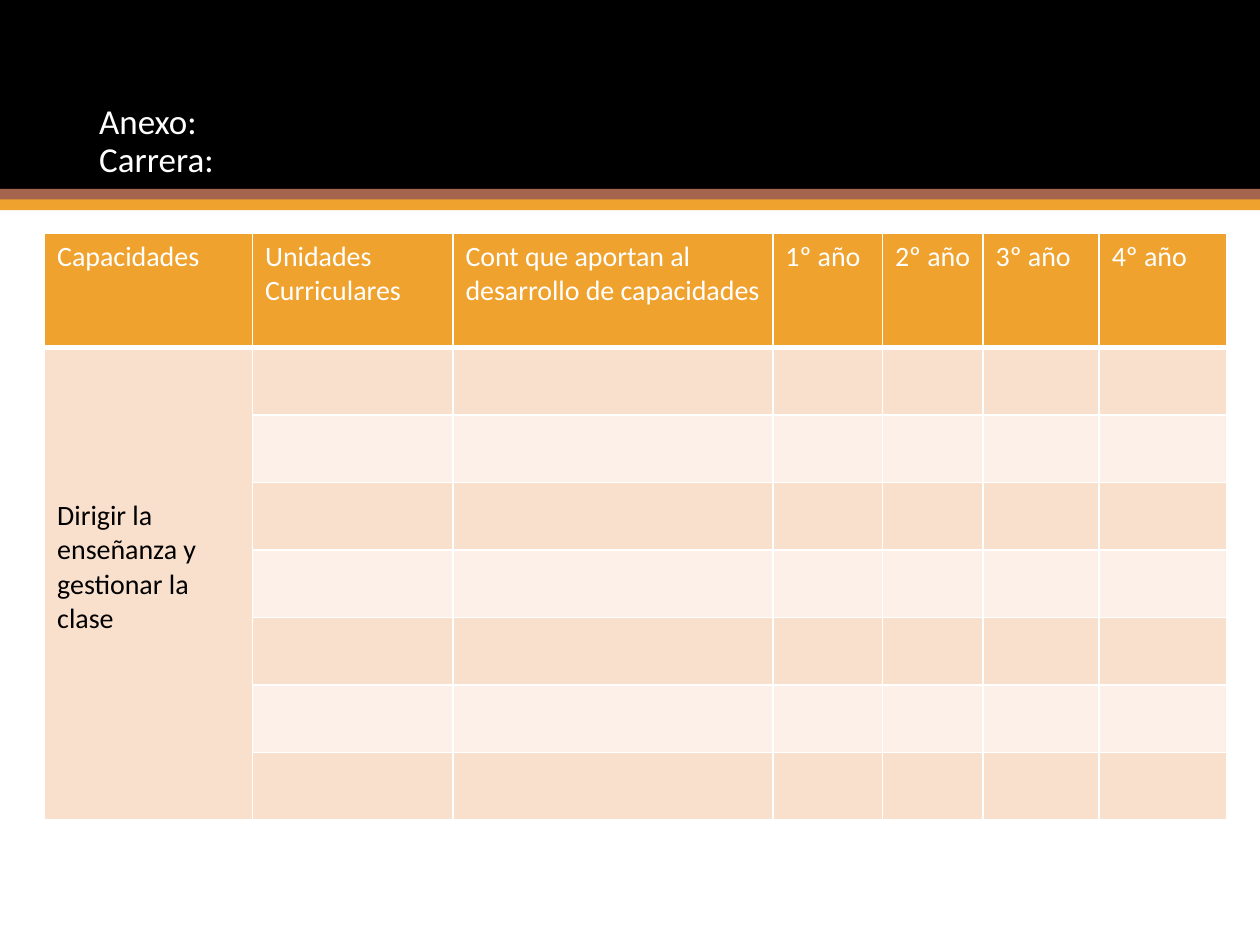
from lxml.etree import SubElement
from pptx import Presentation
from pptx.dml.color import RGBColor
from pptx.enum.shapes import MSO_SHAPE
from pptx.enum.text import MSO_ANCHOR
from pptx.oxml import parse_xml
from pptx.oxml.ns import nsdecls
from pptx.util import Cm, Pt

BLACK = RGBColor(0x00, 0x00, 0x00)
WHITE = RGBColor(0xFF, 0xFF, 0xFF)
BROWN = RGBColor(0xA5, 0x64, 0x4E)
ORANGE = RGBColor(0xF0, 0xA2, 0x2E)
PEACH = RGBColor(0xF9, 0xE0, 0xCD)
CREAM = RGBColor(0xFC, 0xF0, 0xE8)

FONT = "Calibri"
PAGE_WIDTH, PAGE_HEIGHT = 25.4, 19.05
BANDS = [(0, 3.81, BLACK), (3.81, 0.22, BROWN), (4.02, 0.22, ORANGE)]
HEADERS = [
    "Capacidades",
    "Unidades Curriculares",
    "Cont que aportan al desarrollo de capacidades",
    "1º año",
    "2º año",
    "3º año",
    "4º año",
]
COLUMN_WIDTHS = [4.19, 4.04, 6.45, 2.21, 2.03, 2.34, 2.57]
HEADER_HEIGHT, ROW_HEIGHT, BODY_ROWS = 2.3, 1.36, 7
CAPACITY = "Dirigir la enseñanza y gestionar la clase"


def add_band(page, top, height, color):
    """Draw a full-width band of one colour."""
    band = page.shapes.add_shape(
        MSO_SHAPE.RECTANGLE, 0, Cm(top), Cm(PAGE_WIDTH), Cm(height)
    )
    band.shadow.inherit = False
    band.fill.solid()
    band.fill.fore_color.rgb = color
    band.line.fill.background()


def format_text(frame, size, color):
    """Apply the slide's font to every run of a text frame."""
    for paragraph in frame.paragraphs:
        for span in paragraph.runs:
            span.font.name = FONT
            span.font.size = Pt(size)
            span.font.bold = False
            span.font.color.rgb = color


def add_title(page, text):
    """Place the heading on the dark band."""
    box = page.shapes.add_textbox(Cm(1.75), Cm(1.02), Cm(21.9), Cm(3.68))
    frame = box.text_frame
    frame.word_wrap = True
    frame.vertical_anchor = MSO_ANCHOR.MIDDLE
    frame.text = text
    frame.paragraphs[0].line_spacing = 0.9
    format_text(frame, 20, WHITE)


def set_borders(cell, bottom, top):
    """Give a cell white borders, with its own top and bottom widths."""
    properties = cell._tc.get_or_add_tcPr()
    widths = {"lnL": 1, "lnR": 1, "lnT": top, "lnB": bottom}
    for position, (tag, width) in enumerate(widths.items()):
        line = parse_xml(f'<a:{tag} {nsdecls("a")} w="{Pt(width)}"/>')
        namespace = line.nsmap["a"]
        fill = SubElement(line, f"{{{namespace}}}solidFill")
        SubElement(fill, f"{{{namespace}}}srgbClr", val=str(WHITE))
        properties.insert(position, line)


def style_cell(cell, row):
    """Fill and outline a cell according to its row."""
    cell.fill.solid()
    cell.fill.fore_color.rgb = ORANGE if row == 0 else PEACH if row % 2 else CREAM
    cell.margin_right = Cm(0.2)
    set_borders(cell, bottom=3 if row == 0 else 1, top=3 if row == 1 else 1)


def add_capacity_table(page):
    """Build the table of capacities by curricular unit and year."""
    table = page.shapes.add_table(
        BODY_ROWS + 1, len(HEADERS), Cm(0.9), Cm(4.71),
        Cm(sum(COLUMN_WIDTHS)), Cm(HEADER_HEIGHT + BODY_ROWS * ROW_HEIGHT),
    ).table
    for column, width in zip(table.columns, COLUMN_WIDTHS):
        column.width = Cm(width)
    for row, line in enumerate(table.rows):
        line.height = Cm(ROW_HEIGHT if row else HEADER_HEIGHT)
        for cell in line.cells:
            style_cell(cell, row)
    for column, header in enumerate(HEADERS):
        frame = table.cell(0, column).text_frame
        frame.text = header
        format_text(frame, 16, WHITE)
    capacity = table.cell(1, 0)
    capacity.merge(table.cell(BODY_ROWS, 0))
    capacity.margin_top = Cm(3.05)
    capacity.text_frame.text = CAPACITY
    format_text(capacity.text_frame, 16, BLACK)


def main():
    """Build and save the slide."""
    deck = Presentation()
    deck.slide_width, deck.slide_height = Cm(PAGE_WIDTH), Cm(PAGE_HEIGHT)
    page = deck.slides.add_slide(deck.slide_layouts[6])
    for top, height, color in BANDS:
        add_band(page, top, height, color)
    add_title(page, "Anexo:\vCarrera:")
    add_capacity_table(page)
    deck.save("out.pptx")


if __name__ == "__main__":
    main()
